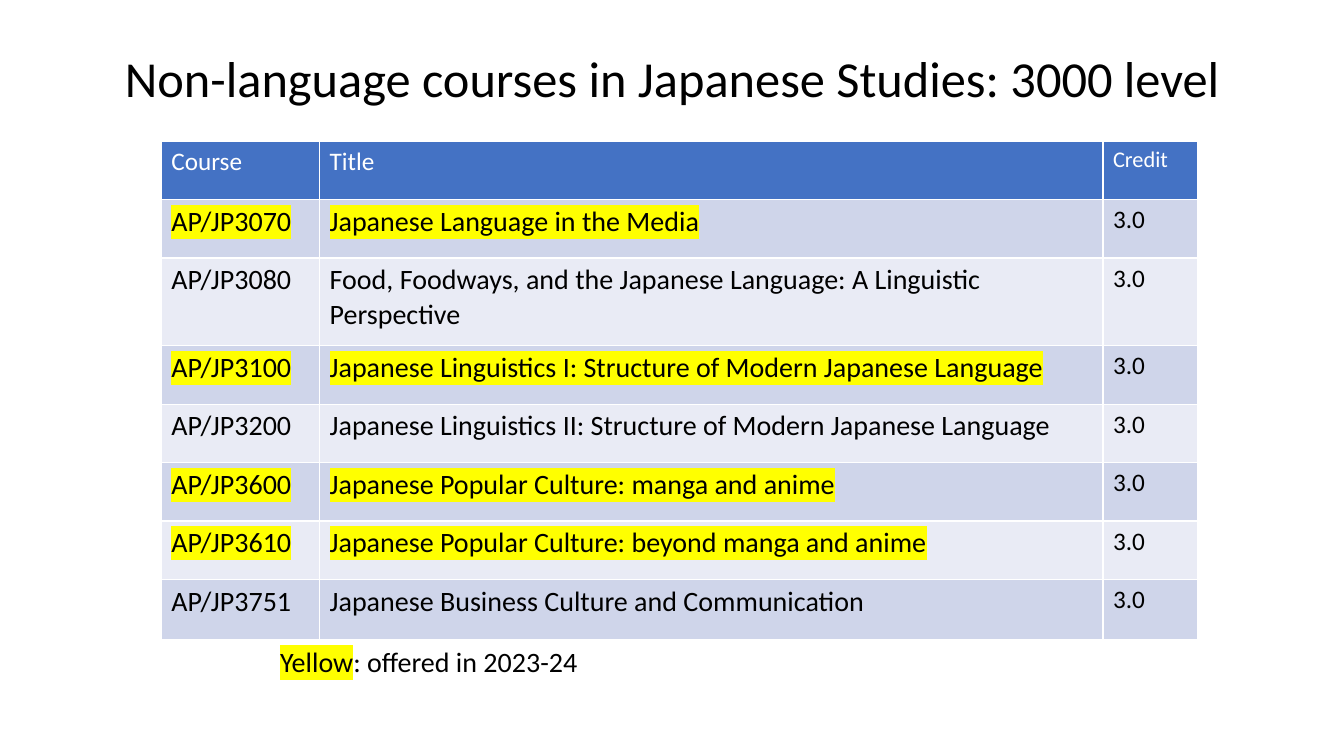
from lxml import etree
from pptx import Presentation
from pptx.dml.color import RGBColor
from pptx.enum.text import MSO_ANCHOR, MSO_AUTO_SIZE, PP_ALIGN
from pptx.oxml.ns import qn
from pptx.util import Pt

MIDDLE = MSO_ANCHOR.MIDDLE
CENTER = PP_ALIGN.CENTER
GROW = MSO_AUTO_SIZE.SHAPE_TO_FIT_TEXT

TITLE = "Non-language courses in Japanese Studies: 3000 level"
HEADER = ("Course", "Title", "Credit")
HEADER_SIZES = (18, 18, 16)
COURSES = [
    ("AP/JP3070", "Japanese Language in the Media", "3.0", True),
    ("AP/JP3080", "Food, Foodways, and the Japanese Language: A Linguistic Perspective", "3.0", False),
    ("AP/JP3100", "Japanese Linguistics I: Structure of Modern Japanese Language", "3.0", True),
    ("AP/JP3200", "Japanese Linguistics II: Structure of Modern Japanese Language", "3.0", False),
    ("AP/JP3600", "Japanese Popular Culture: manga and anime", "3.0", True),
    ("AP/JP3610", "Japanese Popular Culture: beyond manga and anime", "3.0", True),
    ("AP/JP3751", "Japanese Business Culture and Communication", "3.0", False),
]
COURSE_SIZES = (20, 20, 18)
LEGEND = [("Yellow", True), (": offered in 2023-24", False)]

EMU_PER_PX = 9144
SLIDE = (1333, 750)
TITLE_BOX = (92, 8, 1150, 145)
TABLE_AT = (160, 140)
COL_WIDTHS = (157, 777, 94)
ROW_HEIGHTS = (58, 58, 87, 58, 58, 58, 58, 60)
LEGEND_BOX = (268, 634, 390, 44)

FONT = "Calibri"
BLACK, WHITE, YELLOW = "000000", "FFFFFF", "FFFF00"
HEADER_FILL = "4472C4"
BANDS = ("CFD5EA", "E9EBF5")


def px(n):
    return n * EMU_PER_PX


def rgb(value):
    return RGBColor.from_string(value)


def highlight(r):
    mark = etree.SubElement(r.font._element, qn("a:highlight"))
    etree.SubElement(mark, qn("a:srgbClr"), val=YELLOW)


def write(p, parts, size, color=BLACK):
    p.font.name = FONT
    p.font.size = Pt(size)
    p.font.bold = False
    p.font.color.rgb = rgb(color)
    for text, marked in parts:
        r = p.add_run()
        r.text = text
        if marked:
            highlight(r)


def fill_row(row, texts, sizes, fill, color, marked):
    for i, (cell, text, size) in enumerate(zip(row.cells, texts, sizes)):
        cell.fill.solid()
        cell.fill.fore_color.rgb = rgb(fill)
        write(cell.text_frame.paragraphs[0], [(text, marked and i < 2)], size, color)


def main():
    prs = Presentation()
    prs.slide_width, prs.slide_height = map(px, SLIDE)
    s = prs.slides.add_slide(prs.slide_layouts[5])

    title = s.shapes.title
    title.left, title.top, title.width, title.height = map(px, TITLE_BOX)
    tf = title.text_frame
    tf.vertical_anchor = MIDDLE
    p = tf.paragraphs[0]
    p.alignment = CENTER
    p.line_spacing = 0.9
    write(p, [(TITLE, False)], 36)

    size = (sum(COL_WIDTHS), sum(ROW_HEIGHTS))
    table = s.shapes.add_table(
        len(ROW_HEIGHTS), len(COL_WIDTHS), *map(px, TABLE_AT + size)
    ).table
    for col, width in zip(table.columns, COL_WIDTHS):
        col.width = px(width)
    for row, height in zip(table.rows, ROW_HEIGHTS):
        row.height = px(height)
    fill_row(table.rows[0], HEADER, HEADER_SIZES, HEADER_FILL, WHITE, False)
    for i, (*texts, offered) in enumerate(COURSES):
        fill_row(table.rows[i + 1], texts, COURSE_SIZES, BANDS[i % 2], BLACK, offered)

    tf = s.shapes.add_textbox(*map(px, LEGEND_BOX)).text_frame
    tf.word_wrap = True
    tf.auto_size = GROW
    write(tf.paragraphs[0], LEGEND, 20)

    prs.save("out.pptx")


if __name__ == "__main__":
    main()
